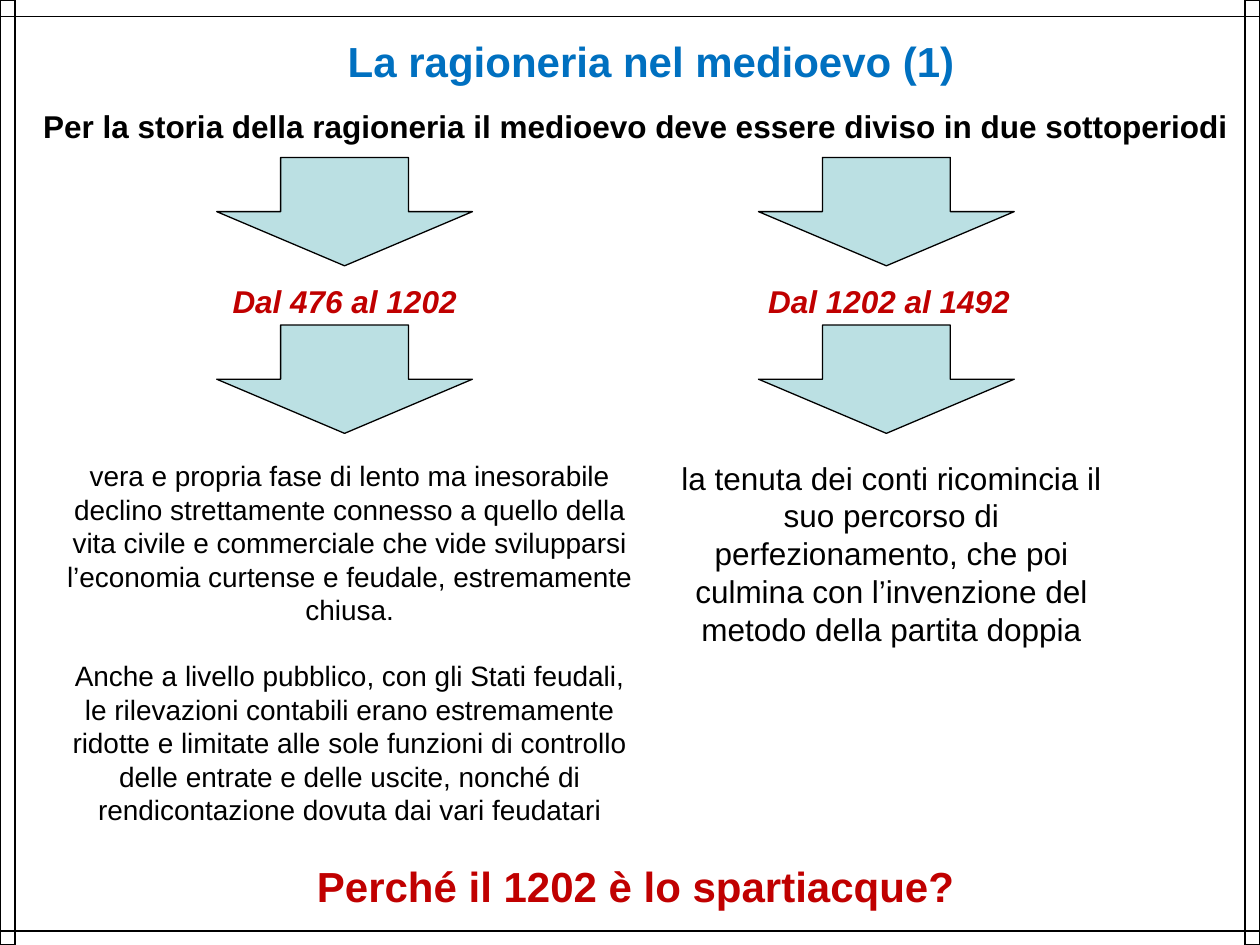
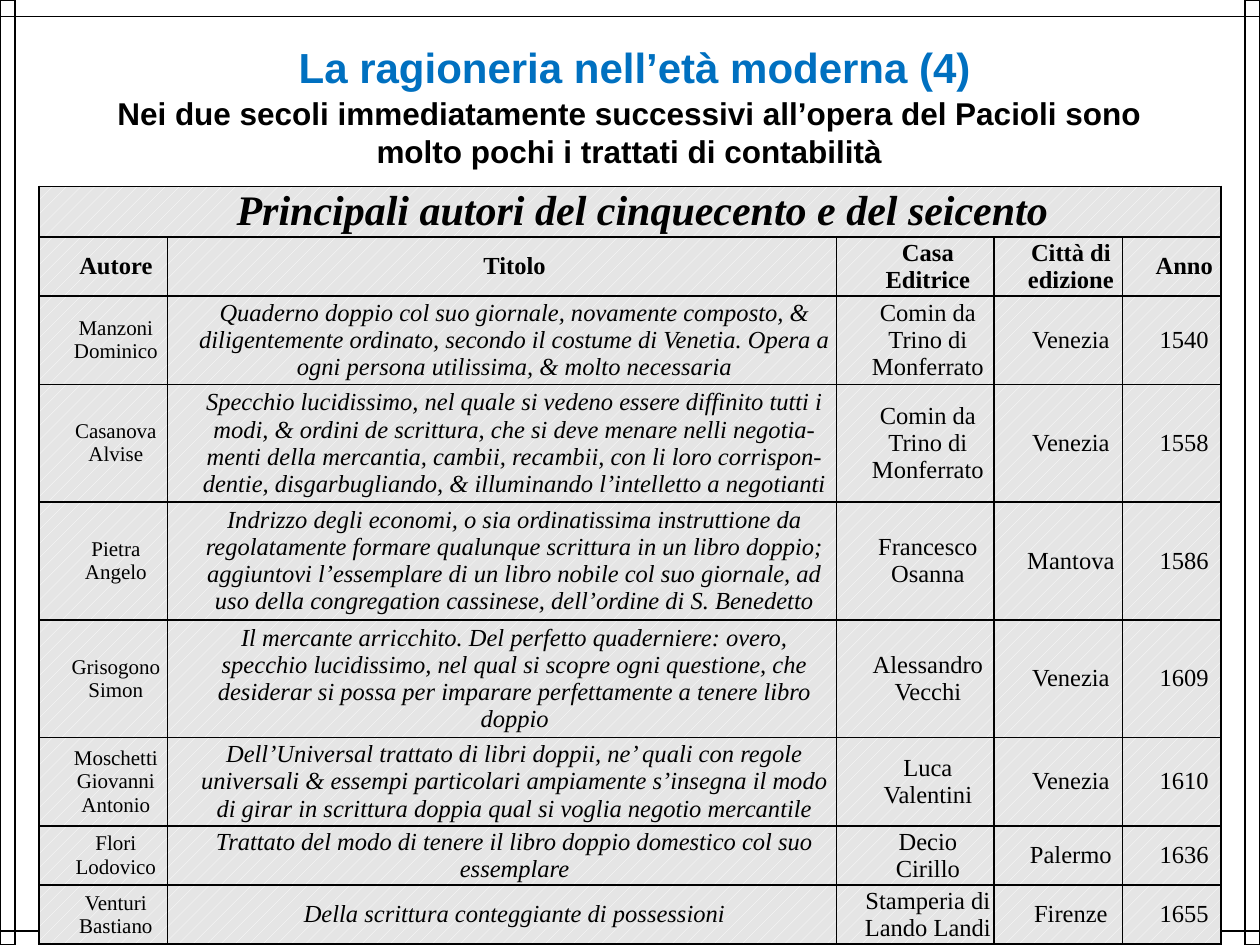
"""Build two slides on the history of accounting, from the Middle Ages to the modern era."""
from dataclasses import dataclass

from lxml import etree
from pptx import Presentation
from pptx.dml.color import RGBColor
from pptx.enum.dml import MSO_PATTERN
from pptx.enum.shapes import MSO_CONNECTOR, MSO_SHAPE
from pptx.enum.text import MSO_ANCHOR, MSO_AUTO_SIZE, PP_ALIGN
from pptx.oxml.ns import qn
from pptx.util import Inches, Pt

RECTANGLE, DOWN_ARROW = MSO_SHAPE.RECTANGLE, MSO_SHAPE.DOWN_ARROW
STRAIGHT = MSO_CONNECTOR.STRAIGHT
LEFT, CENTER = PP_ALIGN.LEFT, PP_ALIGN.CENTER
TOP, MIDDLE = MSO_ANCHOR.TOP, MSO_ANCHOR.MIDDLE
GROW = MSO_AUTO_SIZE.SHAPE_TO_FIT_TEXT
DOTS = MSO_PATTERN.PERCENT_10

WIDTH, HEIGHT = Inches(10), Inches(7.5)
COLUMNS, ROWS = 100, 75
TITLE_ONLY = 5


@dataclass(frozen=True)
class Theme:
    ink: str = "000000"
    paper: str = "FFFFFF"
    title: str = "0070C0"
    accent: str = "C00000"
    arrow: str = "BBE0E3"
    cell: str = "E5E5E5"
    sans: str = "Arial"
    serif: str = "Times New Roman"
    heading_size: float = 24
    text_size: float = 18
    detail_size: float = 16
    table_size: float = 14
    author_size: float = 12
    line_width: float = 0.75
    border_width: float = 1


THEME = Theme()


def color(value):
    return RGBColor.from_string(value)


def write_text(frame, text, *, size=THEME.text_size, font=THEME.sans, ink=THEME.ink,
               bold=False, italic=False, align=CENTER, gap=0, indent=0):
    for index, line in enumerate(text.split("\n")):
        paragraph = frame.paragraphs[0] if index == 0 else frame.add_paragraph()
        if indent:
            properties = paragraph._p.get_or_add_pPr()
            properties.set("marL", str(Inches(indent)))
            properties.set("indent", "0")
        paragraph.alignment = align
        paragraph.space_before = Pt(gap if index else 0)
        run = paragraph.add_run()
        run.text = line
        run.font.name, run.font.size = font, Pt(size)
        run.font.bold, run.font.italic = bold, italic
        run.font.color.rgb = color(ink)


class SlideBuilder:
    def __init__(self, presentation, theme):
        self.presentation, self.theme = presentation, theme
        self.slide = None

    def place(self, *lengths):
        units = (WIDTH / COLUMNS, HEIGHT / ROWS)
        return [round(length * units[index % 2]) for index, length in enumerate(lengths)]

    def start(self, title, *box):
        layout = self.presentation.slide_layouts[TITLE_ONLY]
        self.slide = self.presentation.slides.add_slide(layout)
        shape = self.slide.shapes.title
        shape.left, shape.top, shape.width, shape.height = self.place(*box)
        frame = shape.text_frame
        frame.auto_size, frame.word_wrap, frame.vertical_anchor = GROW, False, TOP
        write_text(frame, title, size=self.theme.heading_size, ink=self.theme.title,
                   bold=True, align=LEFT)
        self.frame()

    def frame(self):
        band = 1.2
        for left in (0, COLUMNS - band):
            self.shape(RECTANGLE, left, 0, band, ROWS)
        for top in (1.3, 73.9):
            self.line(0, top, COLUMNS, top)

    def shape(self, kind, *box, fill=None):
        shape = self.slide.shapes.add_shape(kind, *self.place(*box))
        shape.shadow.inherit = False
        if fill:
            shape.fill.solid()
            shape.fill.fore_color.rgb = color(fill)
        else:
            shape.fill.background()
        self.outline(shape)

    def line(self, *ends):
        connector = self.slide.shapes.add_connector(STRAIGHT, *self.place(*ends))
        self.outline(connector)
        etree.SubElement(connector._element.spPr, qn("a:effectLst"))

    def outline(self, shape):
        shape.line.color.rgb = color(self.theme.ink)
        shape.line.width = Pt(self.theme.line_width)

    def text(self, text, *box, **text_format):
        frame = self.slide.shapes.add_textbox(*self.place(*box)).text_frame
        frame.word_wrap, frame.auto_size = True, GROW
        write_text(frame, text, **text_format)

    def table(self, heading, records, left, top, widths, heights):
        box = self.place(left, top, sum(widths), sum(heights))
        table = self.slide.shapes.add_table(len(heights), len(widths), *box).table
        table.first_row = table.horz_banding = False
        for column, width in zip(table.columns, widths):
            column.width = self.place(width)[0]
        for row, height in zip(table.rows, heights):
            row.height = self.place(0, height)[1]
        for cell in table.iter_cells():
            self.cell_style(cell)
        table.cell(0, 0).merge(table.cell(0, len(widths) - 1))
        self.cell_text(table.cell(0, 0), heading, size=self.theme.heading_size,
                       bold=True, italic=True)
        for row, record in enumerate(records, start=1):
            body = row > 1
            for column, value in enumerate(record):
                author = body and column == 0
                size = self.theme.author_size if author else self.theme.table_size
                self.cell_text(table.cell(row, column), value, size=size,
                               bold=not body, italic=body and column == 1)

    def cell_text(self, cell, text, **text_format):
        write_text(cell.text_frame, text, font=self.theme.serif, indent=0.2, **text_format)

    def cell_style(self, cell):
        cell.vertical_anchor = MIDDLE
        cell.margin_left = cell.margin_right = Inches(0.02)
        cell.margin_top = cell.margin_bottom = 0
        cell.fill.patterned()
        cell.fill.pattern = DOTS
        cell.fill.fore_color.rgb = color(self.theme.paper)
        cell.fill.back_color.rgb = color(self.theme.cell)
        properties = cell._tc.get_or_add_tcPr()
        for index, side in enumerate(("lnL", "lnR", "lnT", "lnB")):
            border = etree.Element(qn(f"a:{side}"), w=str(Pt(self.theme.border_width)))
            fill = etree.SubElement(border, qn("a:solidFill"))
            etree.SubElement(fill, qn("a:srgbClr"), val=self.theme.ink)
            properties.insert(index, border)


PERIODS = [
    (17.2, "Dal 476 al 1202", (17.2, 20.3)),
    (60.2, "Dal 1202 al 1492", (59.6, 21.9)),
]
DECLINE = (
    "vera e propria fase di lento ma inesorabile declino strettamente connesso a quello "
    "della vita civile e commerciale che vide svilupparsi l’economia curtense e feudale, "
    "estremamente chiusa.\n"
    "Anche a livello pubblico, con gli Stati feudali, le rilevazioni contabili erano "
    "estremamente ridotte e limitate alle sole funzioni di controllo delle entrate e delle "
    "uscite, nonché di rendicontazione dovuta dai vari feudatari"
)
REVIVAL = (
    "la tenuta dei conti ricomincia il suo percorso di perfezionamento, che poi culmina "
    "con l’invenzione del metodo della partita doppia"
)
TREATISES = [
    ("Autore", "Titolo", "Casa\nEditrice", "Città di edizione", "Anno"),
    ("Manzoni\nDominico",
     "Quaderno doppio col suo giornale, novamente composto, & diligentemente ordinato, "
     "secondo il costume di Venetia. Opera a ogni persona utilissima, & molto necessaria",
     "Comin da\nTrino di\nMonferrato", "Venezia", "1540"),
    ("Casanova\nAlvise",
     "Specchio lucidissimo, nel quale si vedeno essere diffinito tutti i modi, & ordini de "
     "scrittura, che si deve menare nelli negotia-menti della mercantia, cambii, recambii, "
     "con li loro corrispon-dentie, disgarbugliando, & illuminando l’intelletto a negotianti",
     "Comin da\nTrino di\nMonferrato", "Venezia", "1558"),
    ("Pietra\nAngelo",
     "Indrizzo degli economi, o sia ordinatissima instruttione da regolatamente formare "
     "qualunque scrittura in un libro doppio; aggiuntovi l’essemplare di un libro nobile col "
     "suo giornale, ad uso della congregation cassinese, dell’ordine di S. Benedetto",
     "Francesco Osanna", "Mantova", "1586"),
    ("Grisogono Simon",
     "Il mercante arricchito. Del perfetto quaderniere: overo, specchio lucidissimo, nel qual "
     "si scopre ogni questione, che desiderar si possa per imparare perfettamente a tenere "
     "libro doppio",
     "Alessandro Vecchi", "Venezia", "1609"),
    ("Moschetti\nGiovanni\nAntonio",
     "Dell’Universal trattato di libri doppii, ne’ quali con regole universali & essempi "
     "particolari ampiamente s’insegna il modo di girar in scrittura doppia qual si voglia "
     "negotio mercantile",
     "Luca\nValentini", "Venezia", "1610"),
    ("Flori\nLodovico",
     "Trattato del modo di tenere il libro doppio domestico col suo essemplare",
     "Decio Cirillo", "Palermo", "1636"),
    ("Venturi\nBastiano", "Della scrittura conteggiante di possessioni",
     "Stamperia di Lando Landi", "Firenze", "1655"),
]


def build_middle_ages(builder):
    theme = builder.theme
    builder.start("La ragioneria nel medioevo (1)", 26.6, 2.3, 50.6, 5.1)
    builder.text("Per la storia della ragioneria il medioevo deve essere diviso in due "
                 "sottoperiodi", 1.6, 8, 97.7, 4, bold=True)
    for arrow_left, period, (left, width) in PERIODS:
        for top in (12.5, 25.8):
            builder.shape(DOWN_ARROW, arrow_left, top, 20.3, 8.6, fill=theme.arrow)
        builder.text(period, left, 21.9, width, 4, ink=theme.accent, bold=True, italic=True)
    builder.text(REVIVAL, 51.6, 35.9, 38.3, 16.2)
    builder.text(DECLINE, 3.9, 35.9, 47.7, 30.6, size=theme.detail_size, gap=18.4)
    builder.text("Perché il 1202 è lo spartiacque?", 1.6, 67.8, 97.7, 5.1,
                 size=theme.heading_size, ink=theme.accent, bold=True)


def build_modern_era(builder):
    builder.start("La ragioneria nell’età moderna (4)", 22.7, 2.8, 55.9, 5.1)
    builder.text("Nei due secoli immediatamente successivi all’opera del Pacioli sono molto "
                 "pochi i trattati di contabilità", 6.2, 7, 87.5, 7.1, bold=True)
    builder.table("Principali autori del cinquecento e del seicento", TREATISES, 3.1, 14.8,
                  widths=(10.2, 53.1, 12.5, 10.2, 7.8),
                  heights=(4, 4.7, 7, 9.3, 9.3, 7, 7, 4.7, 4.7))


def main():
    presentation = Presentation()
    presentation.slide_width, presentation.slide_height = WIDTH, HEIGHT
    builder = SlideBuilder(presentation, THEME)
    build_middle_ages(builder)
    build_modern_era(builder)
    presentation.save("out.pptx")


if __name__ == "__main__":
    main()
